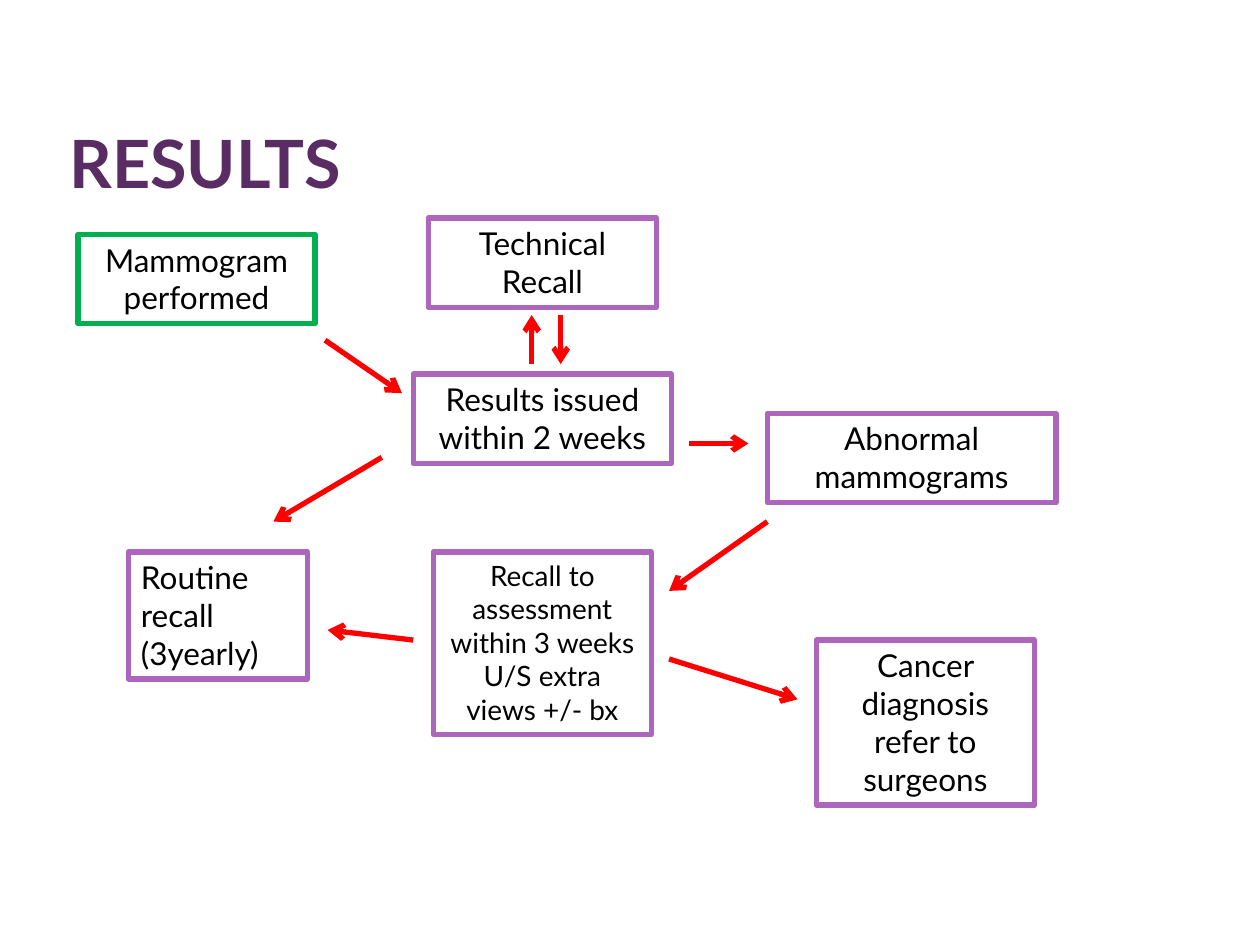
from lxml.etree import SubElement
from pptx import Presentation
from pptx.dml.color import RGBColor
from pptx.enum.shapes import MSO_CONNECTOR as LINK, MSO_SHAPE as SHAPE
from pptx.enum.text import MSO_ANCHOR as ANCHOR, MSO_AUTO_SIZE as FIT, PP_ALIGN as ALIGN
from pptx.oxml.ns import qn
from pptx.util import Inches, Pt

COLORS = {
    "title": "5A2C64",
    "text": "000000",
    "fill": "FFFFFF",
    "step": "AC66BB",
    "start": "00B050",
    "arrow": "FF0000",
}
FONT = "Lato"

STEPS = [
    ("Results issued within 2 weeks", (3.28, 2.97, 2.05, 0.71), {}),
    ("Mammogram performed", (0.62, 1.86, 1.88, 0.71), {"edge": "start"}),
    ("Technical Recall", (3.4, 1.73, 1.81, 0.71), {}),
    ("Abnormal mammograms", (6.09, 3.28, 2.29, 0.71), {}),
    ("Recall to assessment within 3 weeks\nU/S extra views +/- bx",
     (3.44, 4.38, 1.73, 1.45), {"size": 16}),
    ("Routine recall (3yearly)", (1.02, 4.38, 1.42, 1.01), {"align": ALIGN.LEFT}),
    ("Cancer diagnosis refer to surgeons", (6.48, 5.08, 1.73, 1.31), {}),
]

ARROWS = [
    (4.22, 2.89, 4.22, 2.5),
    (4.45, 2.5, 4.45, 2.89),
    (5.47, 3.52, 5.94, 3.52),
    (2.58, 2.7, 3.19, 3.12),
    (3.03, 3.63, 2.17, 4.14),
    (3.28, 5.08, 2.6, 5),
    (5.31, 5.23, 6.33, 5.55),
    (6.09, 4.14, 5.31, 4.69),
]


def color(name):
    return RGBColor.from_string(COLORS[name])


def set_text(frame, text, size, tint, align, bold=False):
    frame.word_wrap = True
    frame.text = text
    for para in frame.paragraphs:
        para.alignment = align
        for run in para.runs:
            font = run.font
            font.name, font.size, font.bold = FONT, Pt(size), bold
            font.color.rgb = color(tint)


def add_title(slide, text):
    box = slide.shapes.add_textbox(*map(Inches, (0.5, 0.35, 7.92, 1.25)))
    frame = box.text_frame
    set_text(frame, text, 38, "title", ALIGN.LEFT, bold=True)
    frame.vertical_anchor = ANCHOR.BOTTOM
    frame.margin_left = frame.margin_right = Inches(0.05)
    frame.margin_top = frame.margin_bottom = 0


def add_step(slide, text, place, edge="step", size=18, align=ALIGN.CENTER):
    box = slide.shapes.add_shape(SHAPE.RECTANGLE, *map(Inches, place))
    box.shadow.inherit = False
    box.fill.solid()
    box.fill.fore_color.rgb = color("fill")
    box.line.color.rgb = color(edge)
    box.line.width = Pt(3.15)
    set_text(box.text_frame, text, size, "text", align)
    box.text_frame.vertical_anchor = ANCHOR.TOP
    box.text_frame.auto_size = FIT.SHAPE_TO_FIT_TEXT


def add_arrow(slide, ends):
    link = slide.shapes.add_connector(LINK.STRAIGHT, *map(Inches, ends))
    link.line.color.rgb = color("arrow")
    link.line.width = Pt(3)
    SubElement(link.line._get_or_add_ln(), qn("a:tailEnd"), type="arrow")
    SubElement(link._element.spPr, qn("a:effectLst"))


def main():
    """Build the slide that charts how screening results are handled."""
    deck = Presentation()
    deck.slide_width, deck.slide_height = Inches(10), Inches(7.5)
    slide = deck.slides.add_slide(deck.slide_layouts[6])
    add_title(slide, "RESULTS")
    for text, place, style in STEPS:
        add_step(slide, text, place, **style)
    for ends in ARROWS:
        add_arrow(slide, ends)
    deck.save("out.pptx")


if __name__ == "__main__":
    main()
